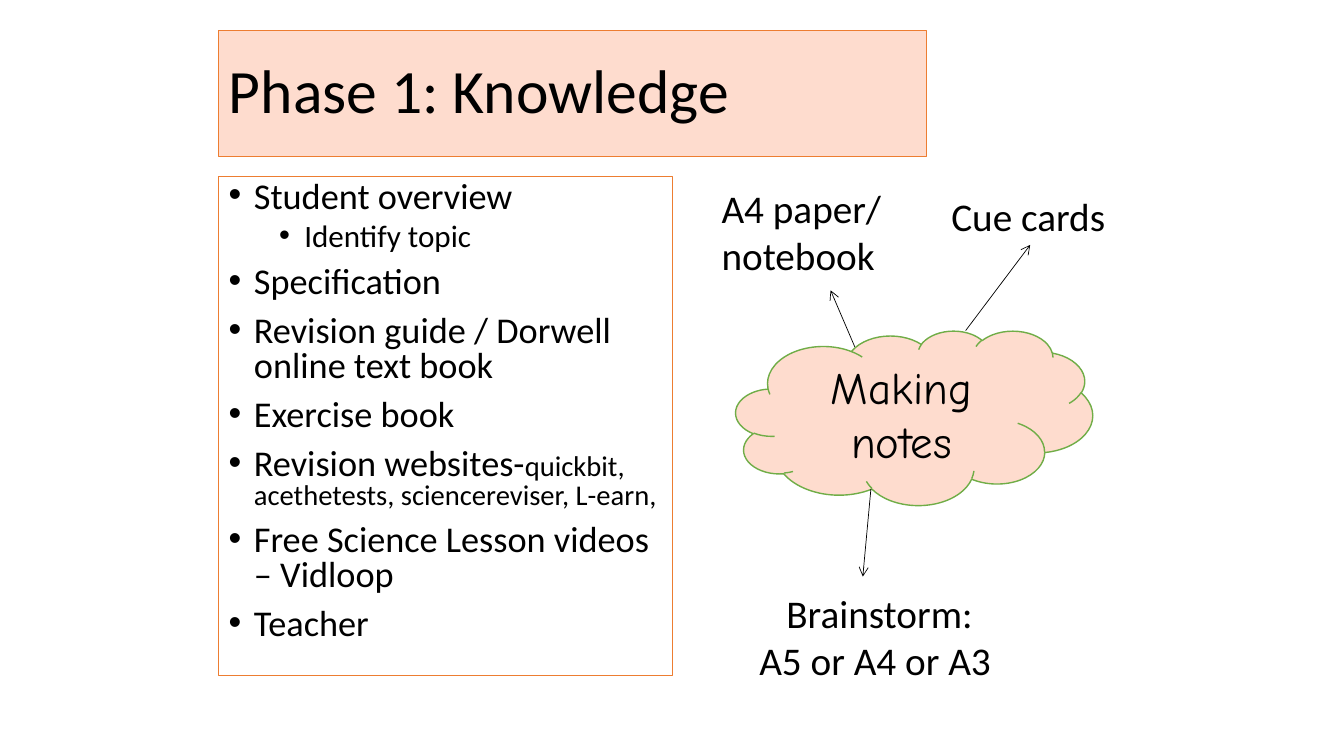
from lxml.etree import SubElement
from pptx import Presentation
from pptx.dml.color import RGBColor
from pptx.enum.shapes import MSO_CONNECTOR, MSO_SHAPE
from pptx.enum.text import MSO_ANCHOR, MSO_AUTO_SIZE, PP_ALIGN
from pptx.oxml.ns import qn
from pptx.util import Emu, Inches, Pt

WIDTH, HEIGHT = Inches(13.33), Inches(7.5)
HUES = {"peach": "FEDCCE", "orange": "ED7D31", "green": "70AD47",
        "white": "FFFFFF", "black": "000000"}
LEFT = 16.28

# Each point: level, then its (text, size) runs
POINTS = [
    (0, [("Student overview", 25.9)]),
    (1, [("Identify topic", 22.2)]),
    (0, [("Specification", 25.9)]),
    (0, [("Revision guide / Dorwell online text book", 25.9)]),
    (0, [("Exercise book", 25.9)]),
    (0, [("Revision websites-", 25.9),
         ("quickbit, acethetests, sciencereviser, L-earn,", 20.4)]),
    (0, [("Free Science Lesson videos – Vidloop", 25.9)]),
    (0, [("Teacher", 25.9)]),
]
# Each label: box, text, alignment, wrap
LABELS = [
    ((70.05, 24.8, 13.05, 7.6), "Cue cards", PP_ALIGN.LEFT, False),
    ((54.15, 77.33, 22.58, 13.87), "Brainstorm:\nA5 or A4 or A3 ",
     PP_ALIGN.CENTER, True),
    ((52.95, 23.73, 13.5, 13.87), "A4 paper/\nnotebook",
     PP_ALIGN.LEFT, False),
]
ARROWS = [
    (71.85, 43.73, 76.65, 32.4),
    (64.8, 64.67, 64.2, 76.27),
    (63.6, 45.87, 61.8, 38.4),
]


def place(box):
    """Turn x, y pairs in percent of the slide into lengths."""
    return [Emu(round(share * (HEIGHT if i % 2 else WIDTH) / 100))
            for i, share in enumerate(box)]


def hue(name):
    return RGBColor.from_string(HUES[name])


def paint(shape, fill, line):
    shape.fill.solid()
    shape.fill.fore_color.rgb = hue(fill)
    shape.line.color.rgb = hue(line)
    shape.line.width = Pt(1)


def style(run, size, face="Calibri"):
    run.font.size = Pt(size)
    run.font.name = face
    run.font.color.rgb = hue("black")


def write(frame, text, size, align, face="Calibri"):
    frame.text = text
    for para in frame.paragraphs:
        para.alignment = align
        for run in para.runs:
            style(run, size, face)


def add_title(slide, box, text):
    title = slide.shapes.title
    title.left, title.top, title.width, title.height = place(box)
    paint(title, "peach", "orange")
    frame = title.text_frame
    write(frame, text, 44, PP_ALIGN.LEFT)
    frame.auto_size = MSO_AUTO_SIZE.NONE
    frame.vertical_anchor = MSO_ANCHOR.MIDDLE
    frame.paragraphs[0].line_spacing = 0.9


def add_list(slide, box, points):
    panel = slide.shapes.add_textbox(*place(box))
    paint(panel, "white", "orange")
    frame = panel.text_frame
    frame.word_wrap = True
    for i, (level, parts) in enumerate(points):
        para = frame.paragraphs[0] if i == 0 else frame.add_paragraph()
        para.level = level
        para.line_spacing = 0.8
        para.space_before = Pt(0 if i == 0 else 5 if level else 10)
        props = para._p.get_or_add_pPr()
        props.set("marL", str(Inches(0.25 + 0.5 * level)))
        props.set("indent", str(Inches(-0.25)))
        SubElement(props, qn("a:buFont")).set("typeface", "Arial")
        SubElement(props, qn("a:buChar")).set("char", "•")
        for text, size in parts:
            run = para.add_run()
            run.text = text
            style(run, size)


def add_cloud(slide, box, text):
    cloud = slide.shapes.add_shape(MSO_SHAPE.CLOUD, *place(box))
    cloud.shadow.inherit = False
    paint(cloud, "peach", "green")
    cloud.text_frame.word_wrap = True
    cloud.text_frame.vertical_anchor = MSO_ANCHOR.MIDDLE
    write(cloud.text_frame, text, 32, PP_ALIGN.CENTER, "Comic Neue")


def add_label(slide, box, text, align, wrap):
    frame = slide.shapes.add_textbox(*place(box)).text_frame
    frame.word_wrap = wrap
    frame.auto_size = MSO_AUTO_SIZE.SHAPE_TO_FIT_TEXT
    write(frame, text, 28, align)


def add_arrow(slide, ends):
    arrow = slide.shapes.add_connector(MSO_CONNECTOR.STRAIGHT, *place(ends))
    arrow.line.color.rgb = hue("black")
    arrow.line.width = Pt(0.5)
    SubElement(arrow.line._get_or_add_ln(), qn("a:tailEnd")).set("type", "arrow")
    SubElement(arrow._element.spPr, qn("a:effectLst"))


def main():
    deck = Presentation()
    deck.slide_width, deck.slide_height = WIDTH, HEIGHT
    slide = deck.slides.add_slide(deck.slide_layouts[5])
    add_title(slide, (LEFT, 4, 52.65, 16.67), "Phase 1: Knowledge")
    add_list(slide, (LEFT, 23.33, 33.75, 66), POINTS)
    add_cloud(slide, (54.75, 43.73, 26.55, 23.07), "Making notes")
    for label in LABELS:
        add_label(slide, *label)
    for ends in ARROWS:
        add_arrow(slide, ends)
    deck.save("out.pptx")


if __name__ == "__main__":
    main()
